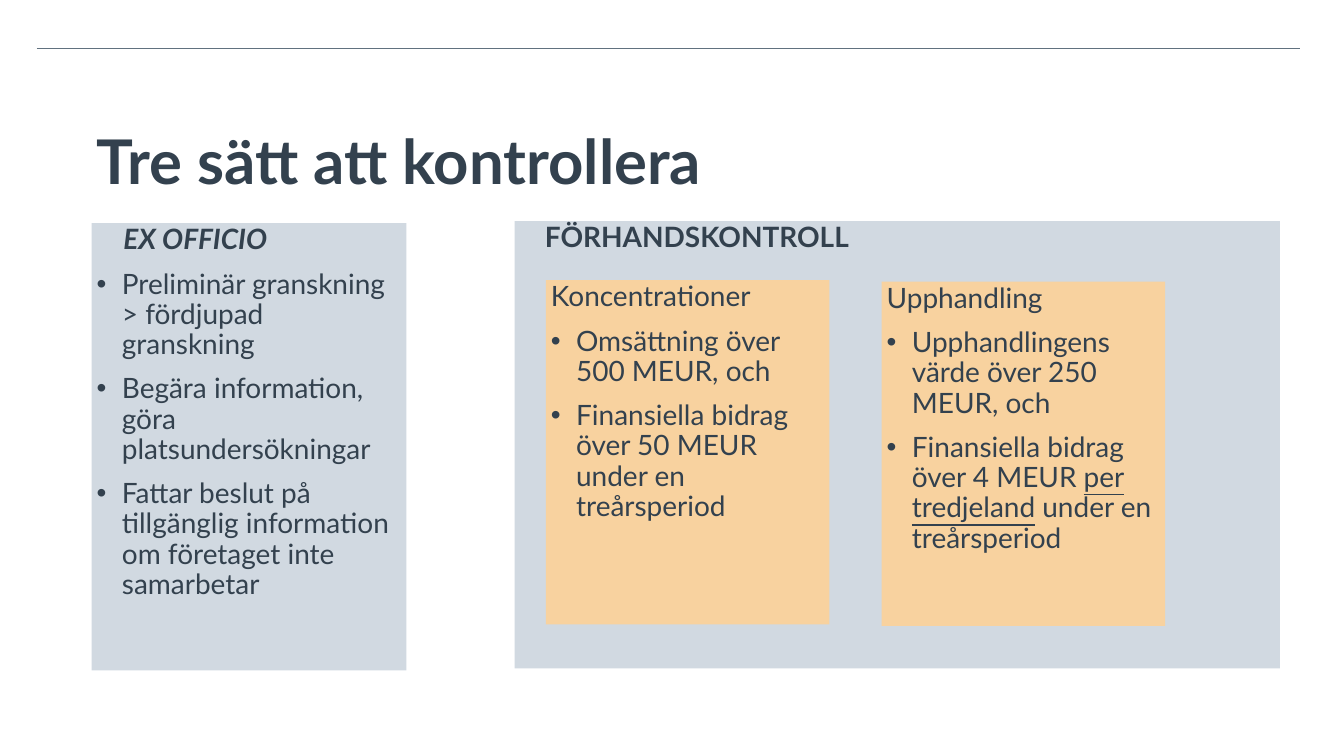
from pptx import Presentation
from pptx.dml.color import RGBColor
from pptx.enum.shapes import MSO_CONNECTOR as CONNECTOR, MSO_SHAPE as SHAPE
from pptx.enum.text import MSO_ANCHOR as ANCHOR, PP_ALIGN as ALIGN
from pptx.oxml.ns import qn
from pptx.util import Inches, Pt
from lxml.etree import SubElement

COLORS = {"text": "33414E", "rule": "61717F", "panel": "D1D9E1", "card": "F8D29F"}


def rgb(name):
    return RGBColor.from_string(COLORS[name])


def add_run(paragraph, text, size=40, bold=False, italic=False, underline=False):
    run = paragraph.add_run()
    run.text = text
    font = run.font
    font.name, font.size = "Lato", Pt(size)
    font.bold, font.italic, font.underline = bold, italic, underline
    font.color.rgb = rgb("text")


class SlideBuilder:
    def __init__(self, slide):
        self.slide = slide

    def rule(self, left, right, top):
        line = self.slide.shapes.add_connector(
            CONNECTOR.STRAIGHT, Inches(left), Inches(top), Inches(right), Inches(top))
        line.line.color.rgb = rgb("rule")
        line.line.width = Pt(0.5)
        SubElement(line._element.spPr, qn("a:effectLst"))

    def paragraph(self, paragraph, indent=0, bullet=False):
        properties = paragraph._p.get_or_add_pPr()
        properties.set("marL", str(Inches(indent)))
        properties.set("indent", str(Inches(-indent if bullet else 0)))
        if bullet:
            SubElement(properties, qn("a:buFont")).set("typeface", "Arial")
            SubElement(properties, qn("a:buChar")).set("char", "•")
        paragraph.alignment = ALIGN.LEFT
        paragraph.line_spacing = 0.9

    def title(self, text, *box):
        shape = self.slide.shapes.add_textbox(*map(Inches, box))
        frame = shape.text_frame
        frame.word_wrap = True
        frame.vertical_anchor = ANCHOR.MIDDLE
        self.paragraph(frame.paragraphs[0])
        add_run(frame.paragraphs[0], text, size=88, bold=True)

    def panel(self, color, box, heading, bullets=(), indent=0, **heading_format):
        shape = self.slide.shapes.add_shape(SHAPE.RECTANGLE, *map(Inches, box))
        shape.shadow.inherit = False
        shape.fill.solid()
        shape.fill.fore_color.rgb = rgb(color)
        shape.line.fill.background()
        frame = shape.text_frame
        frame.word_wrap = True
        frame.vertical_anchor = ANCHOR.TOP
        self.paragraph(frame.paragraphs[0], indent)
        add_run(frame.paragraphs[0], heading, **heading_format)
        for runs in bullets:
            paragraph = frame.add_paragraph()
            self.paragraph(paragraph, 0.5, bullet=True)
            paragraph.space_before = Pt(20)
            for position, text in enumerate(runs):
                add_run(paragraph, text, underline=position == 1)


def main():
    presentation = Presentation()
    presentation.slide_width, presentation.slide_height = Inches(26.66), Inches(15)
    builder = SlideBuilder(presentation.slides.add_slide(presentation.slide_layouts[6]))

    builder.rule(0.73, 25.79, 0.96)
    builder.title("Tre sätt att kontrollera", 1.82, 2.16, 23, 2.23)
    builder.panel("panel", (1.82, 4.43, 6.24, 8.87), "EX OFFICIO", [
        ["Preliminär granskning > fördjupad granskning"],
        ["Begära information, göra platsundersökningar"],
        ["Fattar beslut på tillgänglig information om företaget inte samarbetar"],
    ], indent=0.53, bold=True, italic=True)
    builder.panel("panel", (10.21, 4.39, 15.18, 8.87), "FÖRHANDSKONTROLL",
                  indent=0.5, bold=True)
    builder.panel("card", (10.83, 5.56, 5.62, 6.83), "Koncentrationer", [
        ["Omsättning över 500 MEUR, och"],
        ["Finansiella bidrag över 50 MEUR under en treårsperiod"],
    ])
    builder.panel("card", (17.49, 5.59, 5.62, 6.83), "Upphandling", [
        ["Upphandlingens värde över 250 MEUR, och"],
        ["Finansiella bidrag över 4 MEUR ", "per tredjeland", " under en treårsperiod"],
    ])
    presentation.save("out.pptx")


if __name__ == "__main__":
    main()
